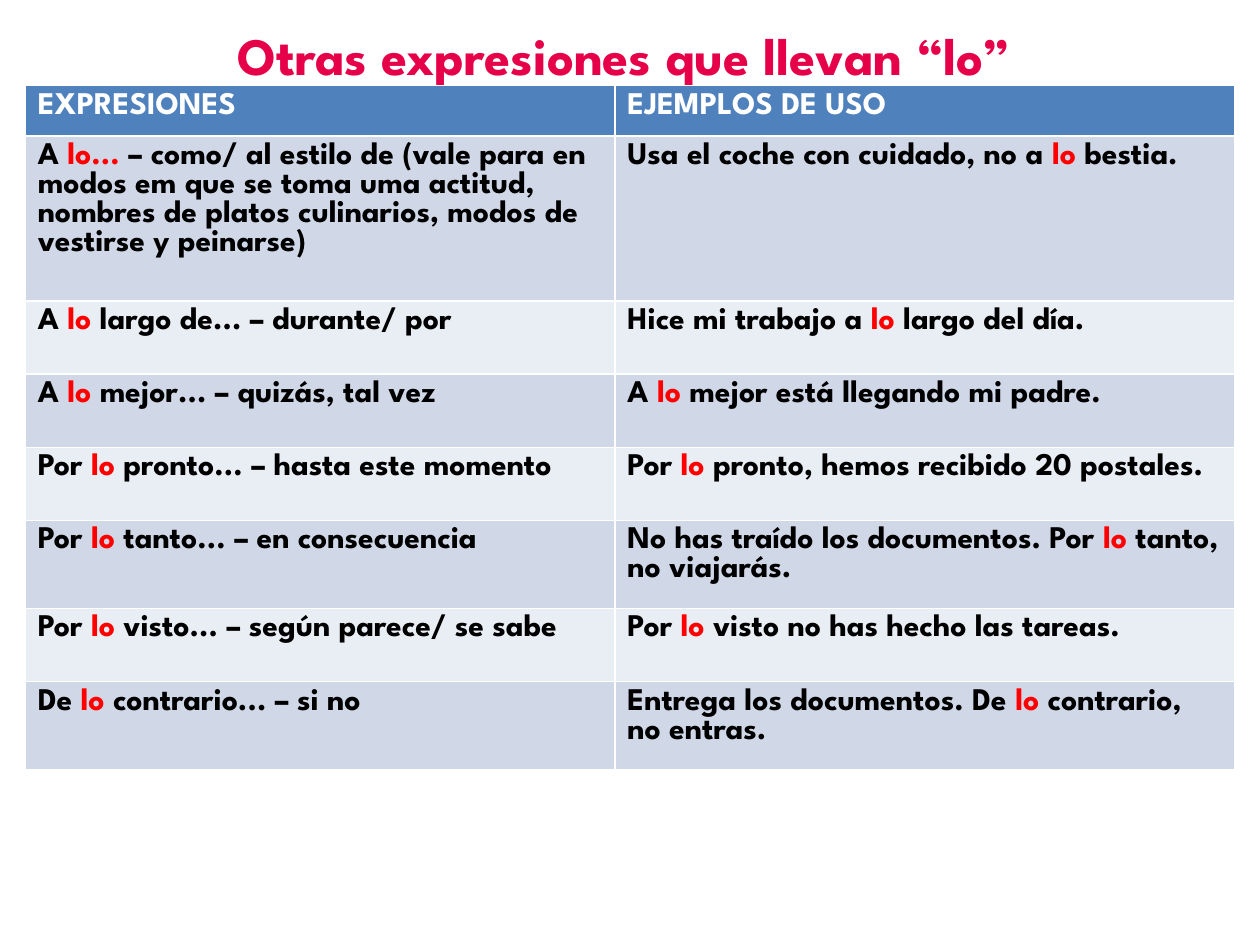
"""Build a slide with a table of Spanish expressions that use "lo"."""
from pptx import Presentation
from pptx.dml.color import RGBColor
from pptx.enum.text import PP_ALIGN
from pptx.util import Inches, Pt

CENTER = PP_ALIGN.CENTER
THEME = {
    "font": "League Spartan",
    "title": "E60049",
    "head": "4F81BD",
    "bands": ("D0D8E8", "E9EDF4"),
    "white": "FFFFFF",
    "text": "000000",
    "mark": "FF0000",
    "big": 30,
    "body": 18,
}
TITLE = "Otras expresiones que llevan “lo”"
ROWS = [
    (0.39, "EXPRESIONES", "EJEMPLOS DE USO"),
    (1.31, "A |lo...| – como/ al estilo de (vale para en modos em que se toma uma "
           "actitud, nombres de platos culinarios, modos de vestirse y peinarse)",
     "Usa el coche con cuidado, no a |lo |bestia."),
    (0.58, "A |lo| largo de... – durante/ por", "Hice mi trabajo a |lo| largo del día."),
    (0.58, "A |lo |mejor... – quizás, tal vez", "A |lo |mejor está llegando mi padre."),
    (0.58, "Por |lo| pronto... – hasta este momento",
     "Por |lo| pronto, hemos recibido 20 postales."),
    (0.7, "Por |lo| tanto... – en consecuencia",
     "No has traído los documentos. Por |lo| tanto, no viajarás."),
    (0.58, "Por |lo| visto... – según parece/ se sabe",
     "Por |lo| visto no has hecho las tareas."),
    (0.7, "De |lo| contrario... – si no",
     "Entrega los documentos. De |lo| contrario, no entras."),
]
COLS = (4.68, 4.92)


def style(run, size, color):
    run.font.name = THEME["font"]
    run.font.size = Pt(size)
    run.font.bold = True
    run.font.color.rgb = RGBColor.from_string(color)


deck = Presentation()
deck.slide_width, deck.slide_height = Inches(10), Inches(7.5)
slide = deck.slides.add_slide(deck.slide_layouts[6])

title = slide.shapes.add_textbox(Inches(0.35), Inches(0.13), Inches(9.21), Inches(0.61))
title.text_frame.word_wrap = True
title.text_frame.text = TITLE
line = title.text_frame.paragraphs[0]
line.alignment = CENTER
style(line.runs[0], THEME["big"], THEME["title"])

high = sum(row[0] for row in ROWS)
table = slide.shapes.add_table(len(ROWS), len(COLS), Inches(0.2), Inches(0.68),
                               Inches(sum(COLS)), Inches(high)).table
for col, width in zip(table.columns, COLS):
    col.width = Inches(width)

for r, (height, *texts) in enumerate(ROWS):
    table.rows[r].height = Inches(height)
    fill = THEME["bands"][(r - 1) % 2] if r else THEME["head"]
    ink = THEME["text"] if r else THEME["white"]
    for c, text in enumerate(texts):
        cell = table.cell(r, c)
        cell.fill.solid()
        cell.fill.fore_color.rgb = RGBColor.from_string(fill)
        line = cell.text_frame.paragraphs[0]
        for i, part in enumerate(text.split("|")):
            run = line.add_run()
            run.text = part
            style(run, THEME["body"], THEME["mark"] if i % 2 else ink)

deck.save("out.pptx")
